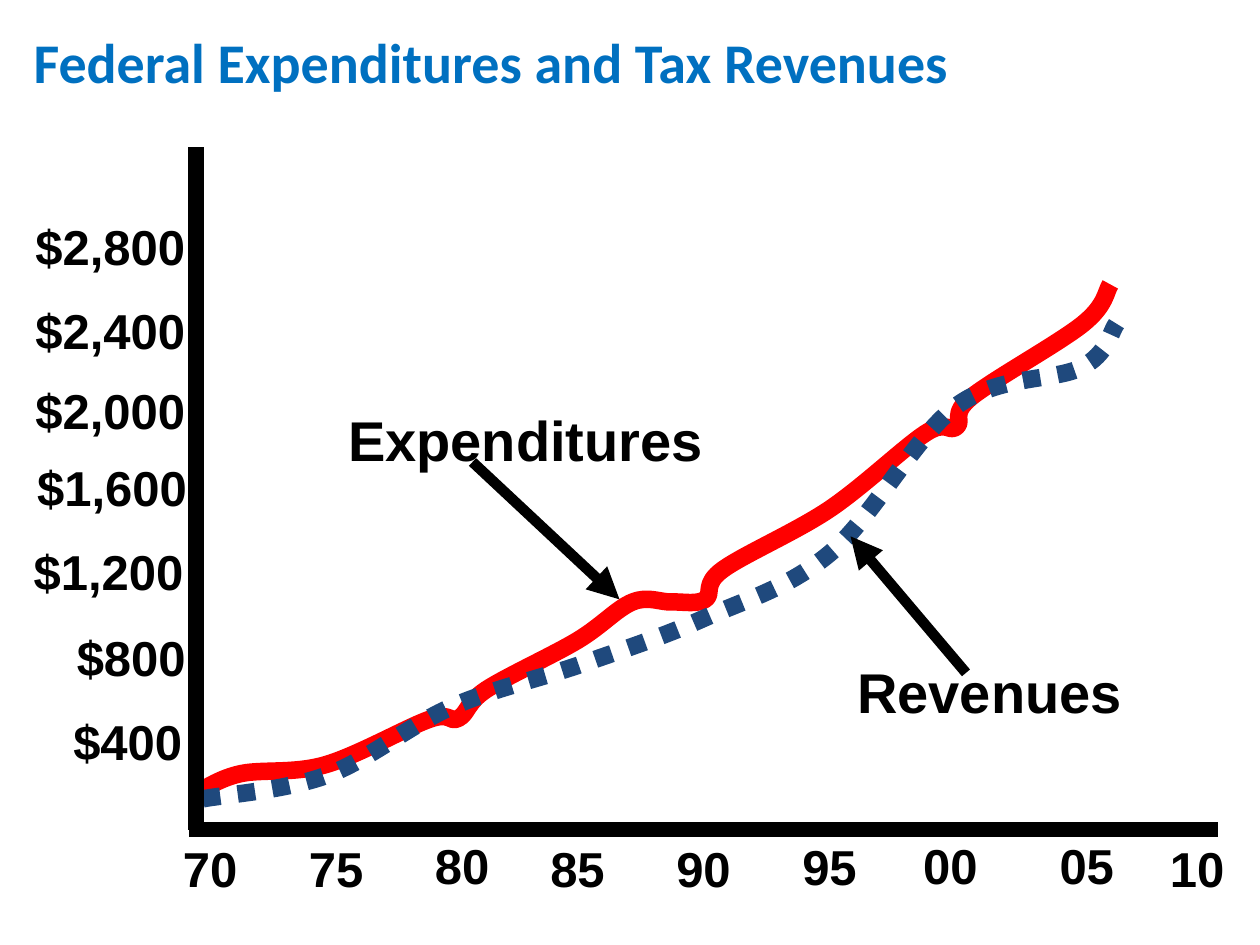
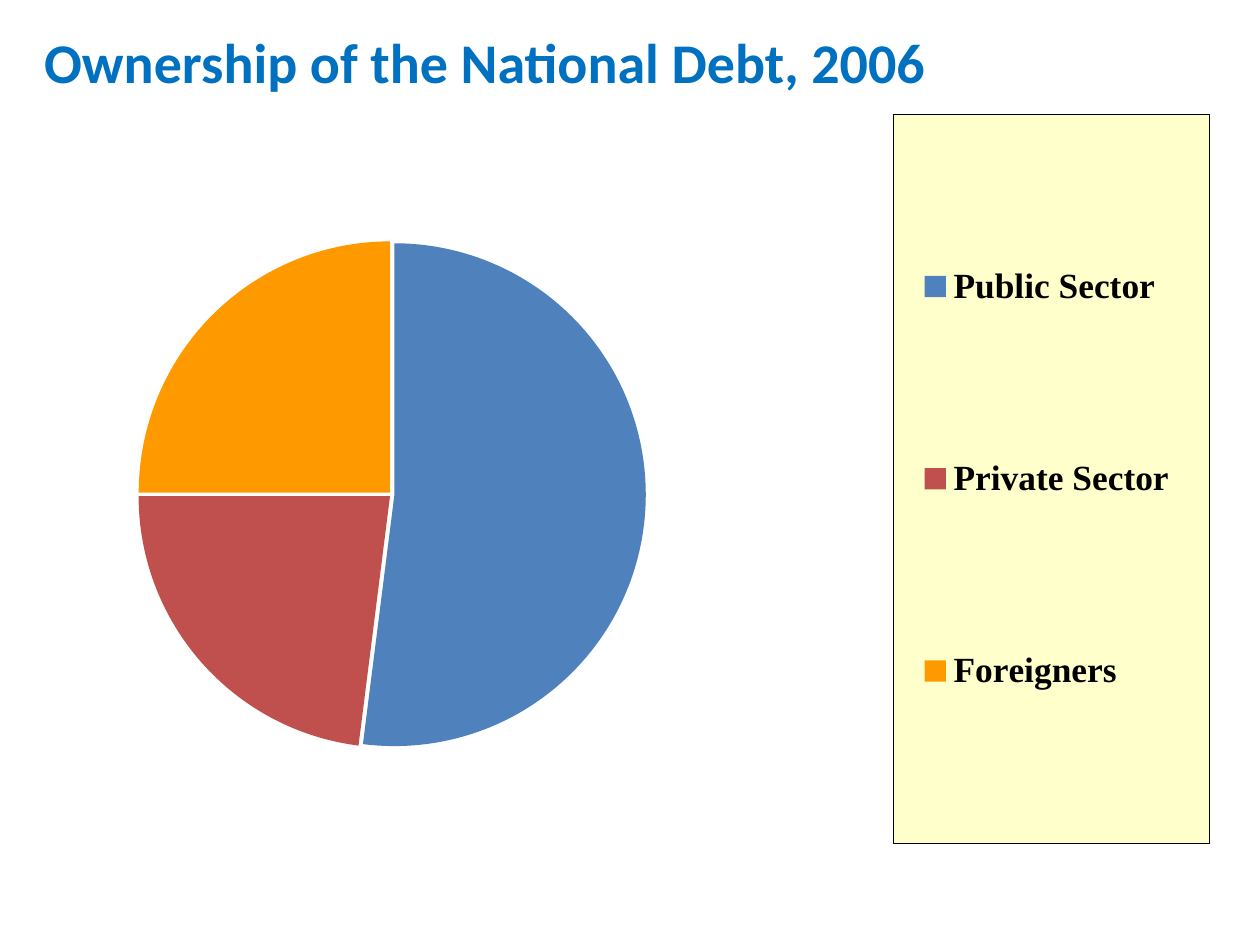
from dataclasses import dataclass

from lxml import etree
from pptx import Presentation
from pptx import util as u
from pptx.chart import data as chart_data
from pptx.dml.color import RGBColor
from pptx.enum import chart as charts
from pptx.enum import dml, shapes, text
from pptx.oxml import parse_xml
from pptx.oxml.ns import nsdecls, qn

Pt = u.Pt


@dataclass(frozen=True)
class Theme:
    title: str = "0070C0"
    ink: str = "000000"
    paper: str = "FFFFFF"
    expenditures: str = "FF0000"
    revenues: str = "1F497D"
    legend_fill: str = "FFFFCC"
    slices: tuple = ("4F81BD", "C0504D", "FF9900")
    title_font: str = "Calibri"
    label_font: str = "Arial"
    chart_font: str = "Times New Roman"
    title_size: float = 32
    name_size: float = 32
    tick_size: float = 28
    chart_size: float = 17.5
    legend_size: float = 20.2
    axis_width: float = 9
    curve_width: float = 10
    arrow_width: float = 6


def rgb(value):
    return RGBColor.from_string(value)


def set_font(font, name, size, color):
    font.name, font.size, font.bold = name, Pt(size), True
    font.color.rgb = rgb(color)


def smooth_outline(sp):
    """Turn the straight segments of a freeform into a curve through its points."""
    outline = sp._element.find(".//" + qn("a:path"))
    knots = [(int(pt.get("x")), int(pt.get("y"))) for pt in outline.iter(qn("a:pt"))]
    for segment in outline.findall(qn("a:lnTo")):
        outline.remove(segment)
    ends = [knots[0], *knots, knots[-1]]
    for before, start, end, after in zip(ends, ends[1:], ends[2:], ends[3:]):
        leave = [s + (e - b) / 6 for b, s, e in zip(before, start, end)]
        arrive = [e - (a - s) / 6 for s, e, a in zip(start, end, after)]
        curve = etree.SubElement(outline, qn("a:cubicBezTo"))
        for x, y in (leave, arrive, end):
            pt = etree.SubElement(curve, qn("a:pt"))
            pt.set("x", str(round(x)))
            pt.set("y", str(round(y)))


def set_layout(parent, index, box, inner=False):
    """Place a chart part by fractions of the chart: left, top, width, height."""
    for old in parent.findall(qn("c:layout")):
        parent.remove(old)
    layout = etree.Element(qn("c:layout"))
    manual = etree.SubElement(layout, qn("c:manualLayout"))
    values = [("layoutTarget", "inner")] if inner else []
    values += [("xMode", "edge"), ("yMode", "edge"), *zip("xywh", box)]
    for tag, value in values:
        etree.SubElement(manual, qn(f"c:{tag}")).set("val", str(value))
    parent.insert(index, layout)


class Deck:
    def __init__(self, theme):
        self.theme = theme
        self.prs = Presentation()
        self.prs.slide_width, self.prs.slide_height = Pt(720), Pt(540)
        self.s = None

    def slide(self, title, left, width, fill=None):
        self.s = self.prs.slides.add_slide(self.prs.slide_layouts[5])
        sp = self.s.shapes.title
        sp.left, sp.top, sp.width, sp.height = Pt(left), Pt(12), Pt(width), Pt(42.5)
        if fill:
            sp.fill.solid()
            sp.fill.fore_color.rgb = rgb(fill)
        tf = sp.text_frame
        tf.text = title
        tf.vertical_anchor = text.MSO_ANCHOR.TOP
        tf.auto_size = text.MSO_AUTO_SIZE.NONE
        p = tf.paragraphs[0]
        p.alignment = text.PP_ALIGN.LEFT
        set_font(p.font, self.theme.title_font, self.theme.title_size, self.theme.title)

    def label(self, words, center, top, width, height, size, spacing=1.0):
        sp = self.s.shapes.add_textbox(
            Pt(center - width / 2), Pt(top), Pt(width), Pt(height))
        tf = sp.text_frame
        tf.word_wrap = True
        tf.text = words
        p = tf.paragraphs[0]
        p.alignment = text.PP_ALIGN.CENTER
        p.line_spacing = spacing
        set_font(p.font, self.theme.label_font, size, self.theme.ink)

    def tick(self, words, center, top, width):
        self.label(words, center, top, width, 33.8, self.theme.tick_size, 0.8)

    def curve_name(self, words, center, top, width):
        self.label(words, center, top, width, 42, self.theme.name_size)

    def line(self, start, end, width, arrow=False):
        sp = self.s.shapes.add_connector(
            shapes.MSO_CONNECTOR.STRAIGHT, *map(Pt, (*start, *end)))
        sp.line.width = Pt(width)
        sp.line.color.rgb = rgb(self.theme.ink)
        if arrow:
            ln = sp.line._get_or_add_ln()
            etree.SubElement(ln, qn("a:tailEnd")).set("type", "triangle")
        etree.SubElement(sp._element.spPr, qn("a:effectLst"))

    def curve(self, knots, color, dash=None):
        first, *rest = [tuple(map(Pt, knot)) for knot in knots]
        builder = self.s.shapes.build_freeform(*first)
        builder.add_line_segments(rest, close=False)
        sp = builder.convert_to_shape()
        smooth_outline(sp)
        sp.shadow.inherit = False
        sp.fill.background()
        sp.line.color.rgb = rgb(color)
        sp.line.width = Pt(self.theme.curve_width)
        if dash:
            sp.line.dash_style = dash

    def pie(self, shares, box, plot_box, legend_box):
        th = self.theme
        data = chart_data.CategoryChartData()
        data.categories = list(shares)
        data.add_series("Series 1", list(shares.values()))
        chart = self.s.shapes.add_chart(
            charts.XL_CHART_TYPE.PIE, *map(Pt, box), data).chart
        chart.has_title = False
        set_font(chart.font, th.chart_font, th.chart_size, th.ink)
        plot = chart.plots[0]
        plot.vary_by_categories = True
        series = plot.series[0]
        series.format.line.fill.background()
        explosion = etree.Element(qn("c:explosion"))
        explosion.set("val", "1")
        series._element.find(qn("c:spPr")).addnext(explosion)
        for i, color in enumerate(th.slices):
            fmt = series.points[i].format
            fmt.fill.solid()
            fmt.fill.fore_color.rgb = rgb(color)
            fmt.line.fill.background()
        set_layout(chart._chartSpace.find(".//" + qn("c:plotArea")), 0, plot_box, inner=True)
        self.legend(chart, legend_box)

    def legend(self, chart, box):
        th = self.theme
        chart.has_legend = True
        legend = chart.legend
        legend.position = charts.XL_LEGEND_POSITION.RIGHT
        legend.include_in_layout = False
        set_font(legend.font, th.chart_font, th.legend_size, th.ink)
        element = legend._element
        set_layout(element, 1, box)
        element.find(qn("c:overlay")).addnext(parse_xml(
            f'<c:spPr {nsdecls("c", "a")}>'
            f'<a:solidFill><a:srgbClr val="{th.legend_fill}"/></a:solidFill>'
            f'<a:ln w="{Pt(0.25)}"><a:solidFill><a:srgbClr val="{th.ink}"/></a:solidFill></a:ln>'
            '</c:spPr>'))


# Label, centre and top
DOLLAR_TICKS = [
    ("$2,800", 63, 126.7), ("$2,400", 63, 174.5), ("$2,000", 63, 220.3),
    ("$1,600", 64, 264.2), ("$1,200", 62, 312.5), ("$800", 75, 361.4),
    ("$400", 73, 409.7),
]
YEAR_TICKS = [
    ("70", 120, 482), ("75", 192, 482), ("80", 264, 480.2),
    ("85", 330, 482), ("90", 402, 482), ("95", 474, 481),
    ("00", 543, 480.2), ("05", 621, 480.2), ("10", 684, 482),
]
EXPENDITURES = [
    (114, 452), (138, 442), (186, 437), (245.5, 411), (262, 410.5), (278, 394),
    (330, 366), (361.5, 344), (384, 344), (403, 342.5), (413, 325.5), (474, 291),
    (529, 247.5), (546.5, 244), (555, 227), (619, 185), (634.5, 162.5),
]
REVENUES = [
    (116, 456.5), (187, 443), (258, 404), (332.5, 379.5), (402, 353.5),
    (474.5, 316), (546.5, 232), (618, 210), (638, 185),
]
DEBT_SHARES = {"Public Sector": 52, "Private Sector ": 23, "Foreigners": 25}


def budget_slide(deck):
    th = deck.theme
    deck.slide("Federal Expenditures and Tax Revenues", 12, 658, th.paper)
    deck.line((108, 474), (696, 474), th.axis_width)
    for tick in DOLLAR_TICKS:
        deck.tick(*tick, width=103)
    deck.curve(EXPENDITURES, th.expenditures)
    deck.curve(REVENUES, th.revenues, dml.MSO_LINE.ROUND_DOT)
    deck.line((270, 264), (354, 342.5), th.arrow_width, arrow=True)
    deck.line((552, 384.5), (486, 306.5), th.arrow_width, arrow=True)
    for tick in YEAR_TICKS:
        deck.tick(*tick, width=60)
    deck.line((112, 84.3), (112, 474.3), th.axis_width)
    deck.curve_name("Revenues", 565.5, 372.4, 171)
    deck.curve_name("Expenditures", 300.5, 228.4, 224)


def debt_slide(deck):
    deck.slide("Ownership of the National Debt, 2006", 18, 624)
    deck.pie(DEBT_SHARES, box=(23, 54, 674.6, 430.6),
             plot_box=(0.069, 0.194, 0.458, 0.674),
             legend_box=(0.723, 0.026, 0.267, 0.968))


def main():
    deck = Deck(Theme())
    budget_slide(deck)
    debt_slide(deck)
    deck.prs.save("out.pptx")


if __name__ == "__main__":
    main()
